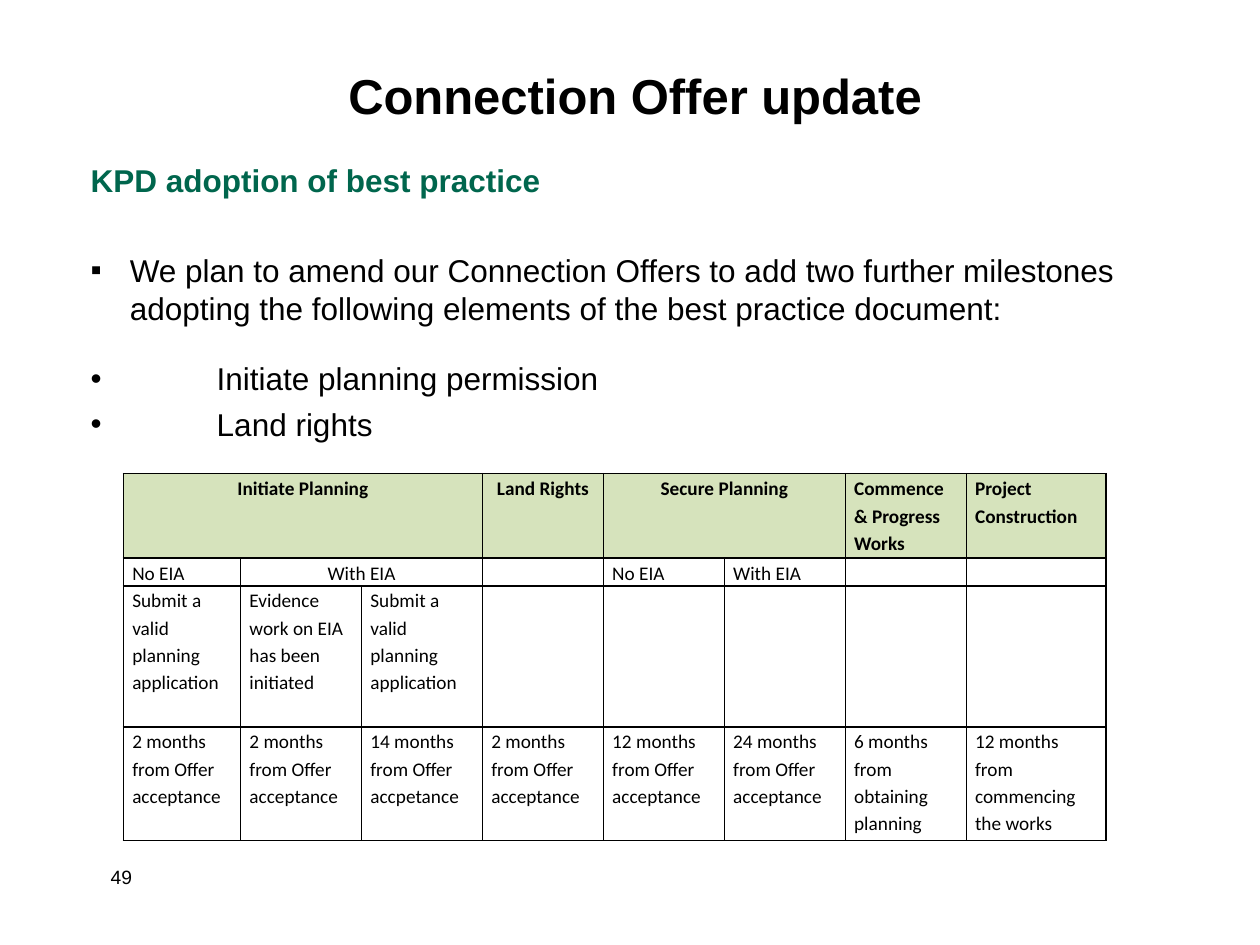
"""Build the Connection Offer update slide with its milestone table."""
from dataclasses import dataclass

import pptx
import pptx.dml.color
import pptx.enum.text
import pptx.oxml.ns
import pptx.util
from lxml import etree

Inches, Pt = pptx.util.Inches, pptx.util.Pt
ALIGN = pptx.enum.text.PP_ALIGN
ANCHOR = pptx.enum.text.MSO_ANCHOR
BLACK, GREEN, PALE = "000000", "00664D", "D6E3BC"


@dataclass(frozen=True)
class Item:
    text: str
    before: float
    left: float
    hang: float = 0
    bullet: str = ""
    color: str = BLACK
    bold: bool = False


@dataclass(frozen=True)
class Entry:
    text: str = ""
    span: int = 1
    center: bool = False


ITEMS = [
    Item("KPD adoption of best practice", 0, 0.5, color=GREEN, bold=True),
    Item("We plan to amend our Connection Offers to add two further milestones "
         "adopting the following elements of the best practice document:",
         29.5, 0.81, 0.31, "▪"),
    Item("Initiate planning permission", 18.8, 1.5, 1, "•"),
    Item("Land rights", 4.4, 1.5, 1, "•"),
]
COLS = [0.93] + [0.96] * 6 + [1.11]
ROWS = [0.67, 0.22, 1.12, 0.9]
SUBMIT = Entry("Submit a valid planning application")
ENTRIES = [
    [Entry("Initiate Planning", 3, True), Entry("Land Rights", center=True),
     Entry("Secure Planning", 2, True), Entry("Commence & Progress Works"),
     Entry("Project Construction")],
    [Entry("No EIA"), Entry("With EIA", 2, True), Entry(), Entry("No EIA"),
     Entry("With EIA"), Entry(), Entry()],
    [SUBMIT, Entry("Evidence work on EIA has been initiated"), SUBMIT] + [Entry()] * 5,
    [Entry(f"{wait}") for wait in (
        "2 months from Offer acceptance", "2 months from Offer acceptance",
        "14 months from Offer accpetance", "2 months from Offer acceptance",
        "12 months from Offer acceptance", "24 months from Offer acceptance",
        "6 months from obtaining planning", "12 months from commencing the works")],
]


def rgb(value: str) -> pptx.dml.color.RGBColor:
    return pptx.dml.color.RGBColor.from_string(value)


def add(parent, tag: str, **attrs: str):
    return etree.SubElement(parent, pptx.oxml.ns.qn(tag), attrs)


def add_run(p, text: str, size: float, color: str = BLACK,
            bold: bool = False, font: str = "Arial") -> None:
    r = p.add_run()
    r.text = text
    r.font.name, r.font.size, r.font.bold = font, Pt(size), bold
    r.font.color.rgb = rgb(color)


def place(sp, left: float, top: float, width: float, height: float):
    sp.left, sp.top = Inches(left), Inches(top)
    sp.width, sp.height = Inches(width), Inches(height)
    tf = sp.text_frame
    tf.word_wrap = True
    tf.auto_size = pptx.enum.text.MSO_AUTO_SIZE.NONE
    tf.vertical_anchor = ANCHOR.TOP
    return tf


def add_item(p, item: Item) -> None:
    p.space_before = Pt(item.before)
    pPr = p._p.get_or_add_pPr()
    pPr.set("marL", str(Inches(item.left)))
    pPr.set("indent", str(-Inches(item.hang)))
    if item.bullet:
        add(pPr, "a:buFont", typeface="Arial")
        add(pPr, "a:buChar", char=item.bullet)
    else:
        add(pPr, "a:buNone")
    add_run(p, item.text, 18, item.color, item.bold)


def add_borders(cell) -> None:
    tcPr = cell._tc.get_or_add_tcPr()
    for side in ("L", "R", "T", "B"):
        ln = add(tcPr, f"a:ln{side}", w=str(Pt(1)))
        add(add(ln, "a:solidFill"), "a:srgbClr", val=BLACK)


def fill_cell(cell, entry: Entry, header: bool) -> None:
    cell.margin_left = cell.margin_right = Inches(0.07)
    cell.margin_top = cell.margin_bottom = 0
    p = cell.text_frame.paragraphs[0]
    p.line_spacing = 1.15
    p.alignment = ALIGN.CENTER if entry.center else ALIGN.LEFT
    if entry.text:
        add_run(p, entry.text, 11, bold=header, font="Calibri")
    else:
        add(p._p, "a:endParaRPr", sz="1100")


def add_milestones(s) -> None:
    frame = s.shapes.add_table(len(ROWS), len(COLS), Inches(0.98), Inches(3.76),
                               Inches(sum(COLS)), Inches(sum(ROWS)))
    table = frame.table
    for column, width in zip(table.columns, COLS):
        column.width = Inches(width)
    for row, height in zip(table.rows, ROWS):
        row.height = Inches(height)
    for i, entries in enumerate(ENTRIES):
        for cell in table.rows[i].cells:
            add_borders(cell)
            if i == 0:
                cell.fill.solid()
                cell.fill.fore_color.rgb = rgb(PALE)
            else:
                cell.fill.background()
        j = 0
        for entry in entries:
            cell = table.cell(i, j)
            fill_cell(cell, entry, i == 0)
            j += entry.span
            if entry.span > 1:
                cell.merge(table.cell(i, j - 1))


def main() -> None:
    prs = pptx.Presentation()
    prs.slide_width, prs.slide_height = Inches(10), Inches(7.5)
    s = prs.slides.add_slide(prs.slide_layouts[1])

    tf = place(s.shapes.title, 0.59, 0.44, 8.9, 0.87)
    tf.margin_top = Inches(0.08)
    p = tf.paragraphs[0]
    p.alignment = ALIGN.CENTER
    add_run(p, "Connection Offer update", 28, bold=True)

    tf = place(s.placeholders[1], 0.12, 1.23, 9.37, 5.43)
    for i, item in enumerate(ITEMS):
        add_item(tf.add_paragraph() if i else tf.paragraphs[0], item)

    add_milestones(s)

    number = s.shapes.add_textbox(0, 0, 0, 0)
    tf = place(number, 0.78, 6.82, 2.08, 0.5)
    add_run(tf.paragraphs[0], "49", 11)
    prs.save("out.pptx")


if __name__ == "__main__":
    main()
